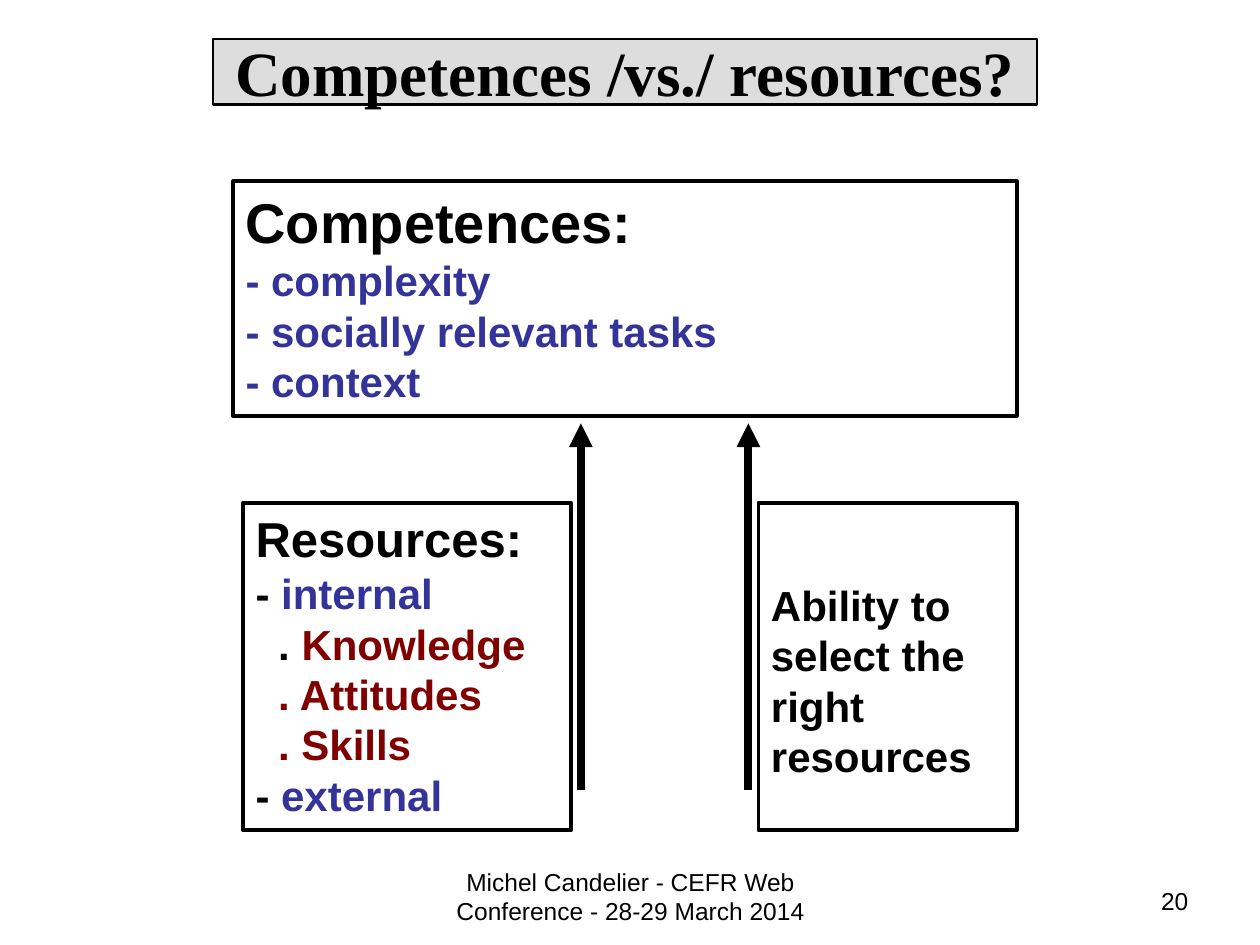
from dataclasses import dataclass

from lxml import etree
from pptx import Presentation
from pptx.dml.color import RGBColor
from pptx.enum.shapes import MSO_CONNECTOR, MSO_SHAPE
from pptx.enum.text import MSO_ANCHOR, MSO_AUTO_SIZE, PP_ALIGN
from pptx.oxml.ns import qn
from pptx.util import Inches, Pt

RECTANGLE = MSO_SHAPE.RECTANGLE
STRAIGHT = MSO_CONNECTOR.STRAIGHT
LEFT, CENTER, RIGHT = PP_ALIGN.LEFT, PP_ALIGN.CENTER, PP_ALIGN.RIGHT
TOP, MIDDLE = MSO_ANCHOR.TOP, MSO_ANCHOR.MIDDLE
NO_AUTOFIT = MSO_AUTO_SIZE.NONE
TITLE_ONLY = 5


@dataclass(frozen=True)
class Theme:
    black: RGBColor = RGBColor(0, 0, 0)
    white: RGBColor = RGBColor(255, 255, 255)
    gray: RGBColor = RGBColor(0xDD, 0xDD, 0xDD)
    blue: RGBColor = RGBColor(0x33, 0x33, 0x99)
    red: RGBColor = RGBColor(0x80, 0, 0)
    serif: str = "Times New Roman"
    sans: str = "Arial"
    title: int = 36
    competences: int = 32
    resources: int = 28
    body: int = 24
    footer: int = 14


THEME = Theme()


def place(shape, box):
    shape.left, shape.top, shape.width, shape.height = (Inches(v) for v in box)


def outline(shape, fill, width):
    shape.fill.solid()
    shape.fill.fore_color.rgb = fill
    shape.line.color.rgb = THEME.black
    shape.line.width = Pt(width)


def style(font, size, color=THEME.black, bold=False, name=THEME.sans):
    font.name, font.size, font.bold = name, Pt(size), bold
    font.color.rgb = color


def add_title(slide, box, text):
    title = slide.shapes.title
    place(title, box)
    outline(title, THEME.gray, 1.5)
    frame = title.text_frame
    frame.text = text
    frame.auto_size = NO_AUTOFIT
    frame.vertical_anchor = MIDDLE
    frame.margin_top = frame.margin_bottom = Inches(0.05)
    paragraph = frame.paragraphs[0]
    paragraph.alignment = CENTER
    style(paragraph.font, THEME.title, bold=True, name=THEME.serif)


def add_panel(slide, box, lines, top_margin=0.05):
    """Each line is (size, indent in inches, [(text, color), ...])."""
    panel = slide.shapes.add_shape(RECTANGLE, *(Inches(v) for v in box))
    panel.shadow.inherit = False
    outline(panel, THEME.white, 2.25)
    frame = panel.text_frame
    frame.word_wrap = True
    frame.vertical_anchor = TOP
    frame.margin_top = Inches(top_margin)
    for number, (size, indent, parts) in enumerate(lines):
        paragraph = frame.add_paragraph() if number else frame.paragraphs[0]
        paragraph.alignment = LEFT
        if indent:
            paragraph._p.get_or_add_pPr().set("marL", str(Inches(indent)))
        style(paragraph.font, size, parts[0][1], bold=True)
        for text, color in parts:
            run = paragraph.add_run()
            run.text = text
            if color != parts[0][1]:
                run.font.color.rgb = color


def add_up_arrow(slide, x, bottom, top):
    arrow = slide.shapes.add_connector(
        STRAIGHT, Inches(x), Inches(bottom), Inches(x), Inches(top))
    arrow.line.color.rgb = THEME.black
    arrow.line.width = Pt(4.5)
    etree.SubElement(arrow.line._get_or_add_ln(), qn("a:tailEnd"), type="triangle")
    etree.SubElement(arrow._element.spPr, qn("a:effectLst"))


def add_footer_text(slide, box, text, alignment):
    frame = slide.shapes.add_textbox(*(Inches(v) for v in box)).text_frame
    frame.word_wrap = True
    frame.text = text
    paragraph = frame.paragraphs[0]
    paragraph.alignment = alignment
    style(paragraph.font, THEME.footer)


def main():
    presentation = Presentation()
    presentation.slide_width, presentation.slide_height = Inches(10), Inches(7.5)
    slide = presentation.slides.add_slide(presentation.slide_layouts[TITLE_ONLY])
    black, blue, red, body = THEME.black, THEME.blue, THEME.red, THEME.body

    add_title(slide, (1.69, 0.31, 6.54, 0.52), "Competences /vs./ resources?")

    features = ["complexity", "socially relevant tasks", "context"]
    add_panel(slide, (1.85, 1.44, 6.22, 1.86), [
        (THEME.competences, 0, [("Competences:", black)]),
        *((body, 0, [(f"- {feature}", blue)]) for feature in features),
    ])

    add_panel(slide, (1.93, 3.99, 2.6, 2.6), [
        (THEME.resources, 0, [("Resources:", black)]),
        (body, 0, [("- ", black), ("internal", blue)]),
        (body, 0.18, [(". ", black), ("Knowledge", red)]),
        (body, 0.18, [(". Attitudes", red)]),
        (body, 0.18, [(". Skills", red)]),
        (body, 0, [("- ", black), ("external", blue)]),
    ])

    add_panel(slide, (6.02, 3.99, 2.05, 2.6), [
        (body, 0, [("Ability to select the right resources", black)]),
    ], top_margin=0.61)

    for x in (4.61, 5.94):
        add_up_arrow(slide, x, bottom=6.27, top=3.36)

    add_footer_text(slide, (3.42, 6.83, 3.17, 0.52),
                    "Michel Candelier - CEFR Web Conference - 28-29 March 2014", CENTER)
    add_footer_text(slide, (7.2, 6.98, 2.33, 0.52), "20", RIGHT)

    presentation.save("out.pptx")


if __name__ == "__main__":
    main()
